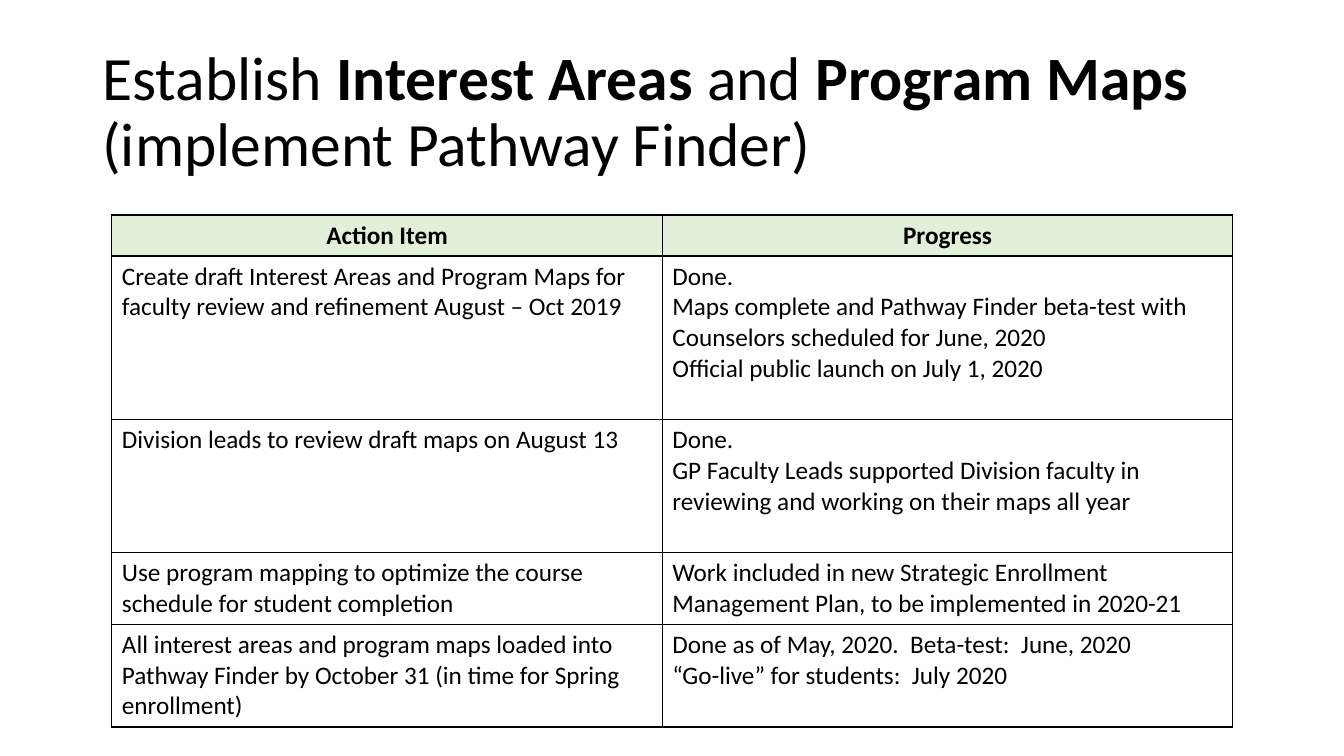
"""Build the slide on interest areas and program maps with its progress table."""
from dataclasses import dataclass

from lxml.etree import SubElement
from pptx import Presentation
from pptx.dml.color import RGBColor
from pptx.enum.text import MSO_ANCHOR as Anchor, PP_ALIGN as Align
from pptx.oxml.ns import qn
from pptx.util import Cm, Pt

TITLE = [
    ("Establish ", False),
    ("Interest Areas ", True),
    ("and ", False),
    ("Program Maps ", True),
    ("(implement Pathway Finder)", False),
]
HEADINGS = ("Action Item", "Progress")
ACTIONS = [
    (
        "Create draft Interest Areas and Program Maps for faculty review and refinement August – Oct 2019",
        "Done.\n"
        "Maps complete and Pathway Finder beta-test with Counselors scheduled for June, 2020\n"
        "Official public launch on July 1, 2020",
    ),
    (
        "Division leads to review draft maps on August 13",
        "Done.\n"
        "GP Faculty Leads supported Division faculty in reviewing and working on their maps all year",
    ),
    (
        "Use program mapping to optimize the course schedule for student completion",
        "Work included in new Strategic Enrollment Management Plan, to be implemented in 2020-21",
    ),
    (
        "All interest areas and program maps loaded into Pathway Finder by October 31 (in time for Spring enrollment)",
        "Done as of May, 2020.  Beta-test:  June, 2020\n"
        "“Go-live” for students:  July 2020",
    ),
]
TITLE_BOX = (Cm(2.33), Cm(1.02), Cm(29.21), Cm(3.68))
TABLE_CORNER = (Cm(2.82), Cm(5.42))
COLUMN_WIDTHS = (Cm(13.87), Cm(14.38))
ROW_HEIGHTS = (Cm(1.03), Cm(4.13), Cm(3.35), Cm(1.8), Cm(2.59))


@dataclass(frozen=True)
class Theme:
    font: str = "Calibri"
    ink: str = "000000"
    paper: str = "FFFFFF"
    heading_fill: str = "E2F0D9"
    title_size: int = 44
    table_size: int = 18
    border_width: int = 1


THEME = Theme()


def format_run(run, size, bold):
    run.font.name = THEME.font
    run.font.size = Pt(size)
    run.font.bold = bold
    run.font.color.rgb = RGBColor.from_string(THEME.ink)


def add_borders(cell):
    properties = cell._tc.get_or_add_tcPr()
    for position, side in enumerate(("lnL", "lnR", "lnT", "lnB")):
        line = SubElement(properties, qn(f"a:{side}"), w=str(Pt(THEME.border_width)))
        fill = SubElement(line, qn("a:solidFill"))
        SubElement(fill, qn("a:srgbClr"), val=THEME.ink)
        properties.insert(position, line)


def fill_cell(cell, text, is_heading):
    cell.fill.solid()
    cell.fill.fore_color.rgb = RGBColor.from_string(THEME.heading_fill if is_heading else THEME.paper)
    add_borders(cell)
    cell.text_frame.text = text
    for paragraph in cell.text_frame.paragraphs:
        paragraph.alignment = Align.CENTER if is_heading else Align.LEFT
        for run in paragraph.runs:
            format_run(run, THEME.table_size, is_heading)


def add_title(slide):
    frame = slide.shapes.add_textbox(*TITLE_BOX).text_frame
    frame.word_wrap = True
    frame.vertical_anchor = Anchor.MIDDLE
    paragraph = frame.paragraphs[0]
    paragraph.line_spacing = 0.9
    for text, bold in TITLE:
        run = paragraph.add_run()
        run.text = text
        format_run(run, THEME.title_size, bold)


def add_progress_table(slide):
    rows = [HEADINGS, *ACTIONS]
    size = (sum(COLUMN_WIDTHS), sum(ROW_HEIGHTS))
    table = slide.shapes.add_table(len(rows), len(HEADINGS), *TABLE_CORNER, *size).table
    for column, width in zip(table.columns, COLUMN_WIDTHS):
        column.width = width
    for row_index, (texts, height) in enumerate(zip(rows, ROW_HEIGHTS)):
        table.rows[row_index].height = height
        for column_index, text in enumerate(texts):
            fill_cell(table.cell(row_index, column_index), text, row_index == 0)


def main():
    presentation = Presentation()
    presentation.slide_width, presentation.slide_height = Cm(33.87), Cm(19.05)
    slide = presentation.slides.add_slide(presentation.slide_layouts[6])
    add_title(slide)
    add_progress_table(slide)
    presentation.save("out.pptx")


if __name__ == "__main__":
    main()
